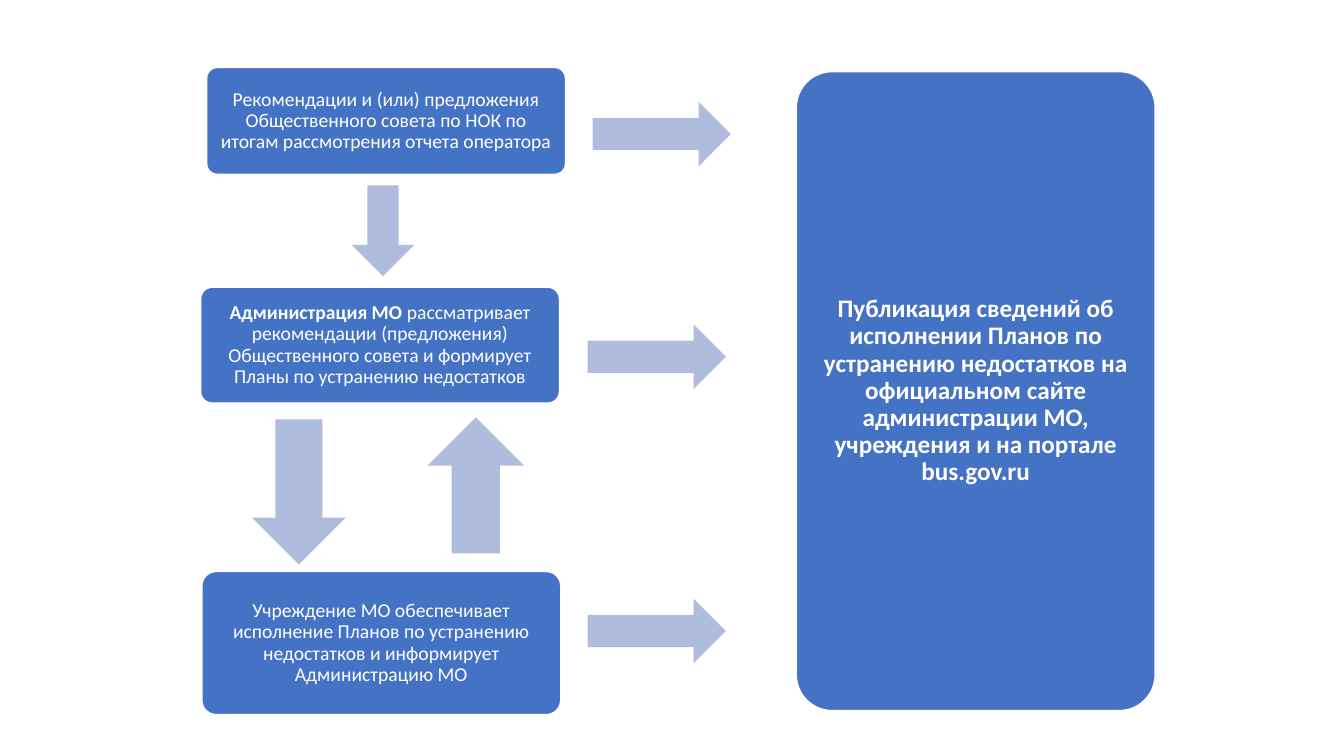
from pptx import Presentation
from pptx.dml.color import RGBColor
from pptx.enum.shapes import MSO_SHAPE
from pptx.enum.text import MSO_ANCHOR, PP_ALIGN
from pptx.util import Inches, Pt

WIDTH, HEIGHT = Inches(13.33), Inches(7.5)
BLUE = RGBColor(0x44, 0x72, 0xC4)
PALE_BLUE = RGBColor(0xB0, 0xBC, 0xDE)
WHITE = RGBColor(0xFF, 0xFF, 0xFF)
BOX_WIDTH = 26.7
RIGHT_ARROW_SIZE = (10.28, 8.53)

STEPS = [
    (15.38, 8.93, 14.13, [
        ("Рекомендации и (или) предложения Общественного совета по НОК "
         "по итогам рассмотрения отчета оператора", False)]),
    (14.93, 38, 15.33, [
        ("Администрация МО ", True),
        ("рассматривает рекомендации (предложения) Общественного совета "
         "и формирует Планы по устранению недостатков", False)]),
    (15.02, 75.6, 18.93, [
        ("Учреждение МО обеспечивает исполнение Планов по устранению "
         "недостатков и информирует Администрацию МО", False)]),
]
PUBLICATION = [
    ("Публикация сведений об исполнении Планов по устранению недостатков "
     "на официальном сайте администрации МО, учреждения и на портале "
     "bus.gov.ru", True)]
VERTICAL_ARROWS = [
    (MSO_SHAPE.DOWN_ARROW, 26.18, 24.53, 4.65, 12),
    (MSO_SHAPE.DOWN_ARROW, 18.75, 55.47, 6.98, 19.2),
    (MSO_SHAPE.UP_ARROW, 31.8, 55.2, 7.2, 18),
]
RIGHT_ARROWS = [(44.1, 13.47), (43.73, 42.93), (43.73, 79.2)]


def add_filled(slide, kind, left, top, width, height, color):
    shape = slide.shapes.add_shape(
        kind,
        round(WIDTH * left / 100), round(HEIGHT * top / 100),
        round(WIDTH * width / 100), round(HEIGHT * height / 100))
    shape.shadow.inherit = False
    shape.fill.solid()
    shape.fill.fore_color.rgb = color
    return shape


def add_arrow(slide, kind, left, top, width, height):
    arrow = add_filled(slide, kind, left, top, width, height, PALE_BLUE)
    arrow.line.fill.background()


def add_box(slide, left, top, height, runs, size, inset):
    box = add_filled(slide, MSO_SHAPE.ROUNDED_RECTANGLE,
                     left, top, BOX_WIDTH, height, BLUE)
    box.adjustments[0] = 0.1
    box.line.color.rgb = WHITE
    box.line.width = Pt(1)
    frame = box.text_frame
    frame.word_wrap = True
    frame.vertical_anchor = MSO_ANCHOR.MIDDLE
    frame.margin_left = frame.margin_right = Inches(inset)
    frame.margin_top = frame.margin_bottom = Inches(inset)
    para = frame.paragraphs[0]
    para.alignment = PP_ALIGN.CENTER
    para.line_spacing = 0.9
    for text, bold in runs:
        span = para.add_run()
        span.text = text
        span.font.name = "Calibri"
        span.font.size = Pt(size)
        span.font.bold = bold
        span.font.color.rgb = WHITE


def main():
    deck = Presentation()
    deck.slide_width, deck.slide_height = WIDTH, HEIGHT
    slide = deck.slides.add_slide(deck.slide_layouts[6])
    for left, top, height, runs in STEPS:
        add_box(slide, left, top, height, runs, 14, 0.06)
    add_box(slide, 59.25, 9.47, 84.53, PUBLICATION, 18, 0.02)
    for arrow in VERTICAL_ARROWS:
        add_arrow(slide, *arrow)
    for left, top in RIGHT_ARROWS:
        add_arrow(slide, MSO_SHAPE.RIGHT_ARROW, left, top, *RIGHT_ARROW_SIZE)
    deck.save("out.pptx")


if __name__ == "__main__":
    main()
